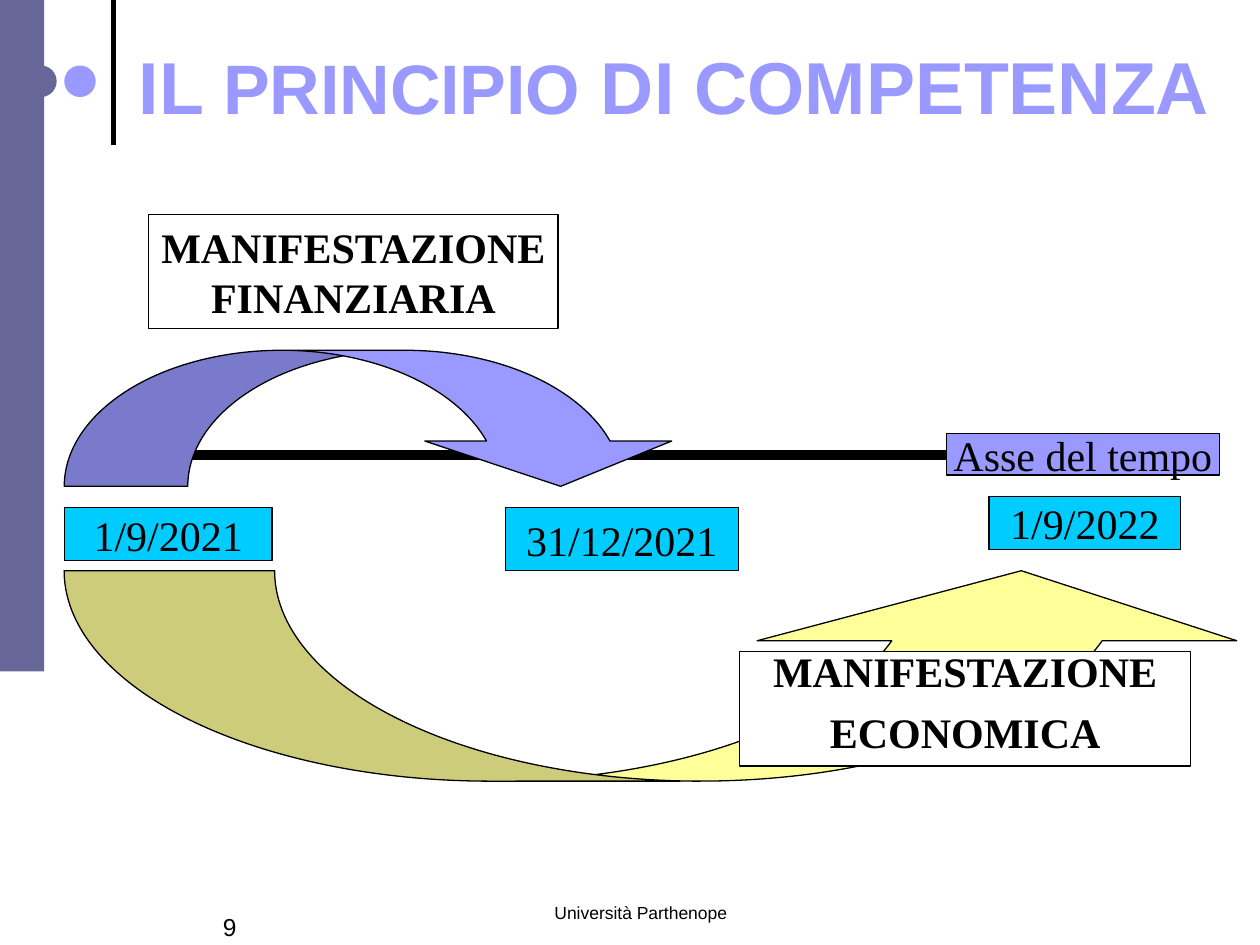
from dataclasses import dataclass

from lxml import etree
from pptx import Presentation
from pptx.dml.color import RGBColor
from pptx.enum.shapes import MSO_CONNECTOR, MSO_SHAPE
from pptx.enum.text import MSO_ANCHOR, MSO_AUTO_SIZE, PP_ALIGN
from pptx.oxml.ns import qn
from pptx.util import Inches, Pt

RECT, OVAL = MSO_SHAPE.RECTANGLE, MSO_SHAPE.OVAL
UP_ARROW, DOWN_ARROW = MSO_SHAPE.CURVED_UP_ARROW, MSO_SHAPE.CURVED_DOWN_ARROW
STRAIGHT = MSO_CONNECTOR.STRAIGHT
TOP, MIDDLE = MSO_ANCHOR.TOP, MSO_ANCHOR.MIDDLE
LEFT, CENTER = PP_ALIGN.LEFT, PP_ALIGN.CENTER
NO_FIT = MSO_AUTO_SIZE.NONE


@dataclass(frozen=True)
class Theme:
    """Colours, fonts and type sizes of the slide."""
    black: str = "000000"
    white: str = "FFFFFF"
    slate: str = "666699"
    lilac: str = "9999FF"
    cyan: str = "00CCFF"
    yellow: str = "FFFF99"
    sans: str = "Arial"
    serif: str = "Times New Roman"
    title: int = 42
    title_small: int = 40
    label: int = 24
    number: int = 14
    footer: int = 10


THEME = Theme()


def inches(box):
    """Turn a box of numbers into lengths."""
    return [Inches(v) for v in box]


def style_run(r, font, size, color, bold=False):
    """Format one run."""
    r.font.name, r.font.size, r.font.bold = font, Pt(size), bold
    r.font.color.rgb = RGBColor.from_string(color)


def add_shape(slide, kind, box, fill, outlined=True):
    """Add a flat preset shape with an optional thin outline."""
    sp = slide.shapes.add_shape(kind, *inches(box))
    sp.shadow.inherit = False
    sp.fill.solid()
    sp.fill.fore_color.rgb = RGBColor.from_string(fill)
    if outlined:
        sp.line.color.rgb = RGBColor.from_string(THEME.black)
        sp.line.width = Pt(0.75)
    else:
        sp.line.fill.background()
    return sp


def add_line(slide, ends, width):
    """Add a straight black line between two points."""
    line = slide.shapes.add_connector(STRAIGHT, *inches(ends))
    line.line.color.rgb = RGBColor.from_string(THEME.black)
    line.line.width = Pt(width)
    etree.SubElement(line._element.spPr, qn("a:effectLst"))


def add_label(slide, box, text, fill, bold=False):
    """Add an outlined box with centred serif text."""
    sp = add_shape(slide, RECT, box, fill)
    tf = sp.text_frame
    tf.text = text
    tf.word_wrap = False
    tf.vertical_anchor = MIDDLE
    for p in tf.paragraphs:
        p.alignment = CENTER
        style_run(p.runs[0], THEME.serif, THEME.label, THEME.black, bold)
    return sp


def add_note(slide, box, text, size, align):
    """Add a small text box at the foot of the slide."""
    tf = slide.shapes.add_textbox(*inches(box)).text_frame
    tf.word_wrap = True
    tf.text = text
    p = tf.paragraphs[0]
    p.alignment = align
    style_run(p.runs[0], THEME.sans, size, THEME.black)


def add_decoration(slide, box):
    """Draw the side band, the two dots and the vertical rule."""
    left, top, width, height = box
    add_line(slide, (left + 0.9, top + 1.15, left + 0.9, top), 3)
    for x, color in ((0.2, THEME.slate), (0.51, THEME.lilac)):
        add_shape(slide, OVAL, (left + x, top + 0.52, 0.25, 0.25), color, False)
    add_shape(slide, RECT, (left, top, width, height), THEME.slate, False)


def add_title(slide, box):
    """Fill the title placeholder."""
    title = slide.shapes.title
    title.left, title.top, title.width, title.height = inches(box)
    tf = title.text_frame
    tf.auto_size = NO_FIT
    tf.word_wrap = True
    tf.vertical_anchor = MIDDLE
    p = tf.paragraphs[0]
    p.alignment = CENTER
    for text, size in (("IL ", THEME.title), ("PRINCIPIO", THEME.title_small),
                       (" DI COMPETENZA", THEME.title)):
        r = p.add_run()
        r.text = text
        style_run(r, THEME.sans, size, THEME.lilac, True)
    p.add_line_break()


def add_timeline(slide, box):
    """Draw the time axis with its name and three dates."""
    left, top, width, height = box
    axis = top + 0.17
    add_line(slide, (left + 0.09, axis, left + 8, axis), 6)
    add_label(slide, (left + width - 2.17, top, 2.17, 0.33),
              "Asse del tempo", THEME.lilac)
    for x, y, w, h, date in ((0, 0.59, 1.65, 0.42, "1/9/2021"),
                             (3.5, 0.59, 1.85, height - 0.59, "31/12/2021"),
                             (7.34, 0.5, 1.52, 0.42, "1/9/2022")):
        add_label(slide, (left + x, top + y, w, h), date, THEME.cyan)


def add_arrow(slide, kind, box, fill, adjustments):
    """Add a curved arrow with the given proportions."""
    sp = add_shape(slide, kind, box, fill)
    for i, value in enumerate(adjustments):
        sp.adjustments[i] = value


def add_financial(slide, box):
    """Draw the arrow above the axis and its caption."""
    left, top, width, height = box
    add_arrow(slide, DOWN_ARROW, (left, top + 1.08, width, height - 1.08),
              THEME.lilac, (0.908, 1.815, 0.333))
    add_label(slide, (left + 0.67, top, 3.25, 0.91),
              "MANIFESTAZIONE\nFINANZIARIA", THEME.white, True)


def add_economic(slide, box):
    """Draw the arrow below the axis and its caption."""
    left, top = box[:2]
    add_arrow(slide, UP_ARROW, box, THEME.yellow, (1.14, 2.28, 0.333))
    sp = add_label(slide, (left + 5.36, top + 0.64, 3.58, 0.91),
                   "MANIFESTAZIONE\nECONOMICA", THEME.white, True)
    tf = sp.text_frame
    tf.word_wrap = True
    tf.vertical_anchor = TOP
    for p in tf.paragraphs:
        p.line_spacing = 0.75
    tf.paragraphs[1].space_before = Pt(13)


def main():
    """Build and save the slide."""
    prs = Presentation()
    prs.slide_width, prs.slide_height = Inches(10), Inches(7.5)
    slide = prs.slides.add_slide(prs.slide_layouts[5])
    add_decoration(slide, (0, 0, 0.35, 5.33))
    add_title(slide, (0.9, 0.21, 8.9, 1.67))
    add_note(slide, (3.5, 7.11, 3.17, 0.5), "Università Parthenope",
             THEME.footer, CENTER)
    add_note(slide, (1.67, 7.19, 1.42, 0.5), "9", THEME.number, LEFT)
    add_timeline(slide, (0.51, 3.44, 9.17, 1.09))
    add_economic(slide, (0.51, 4.53, 9.5, 1.67))
    add_financial(slide, (0.51, 1.7, 4.92, 2.16))
    prs.save("out.pptx")


if __name__ == "__main__":
    main()
